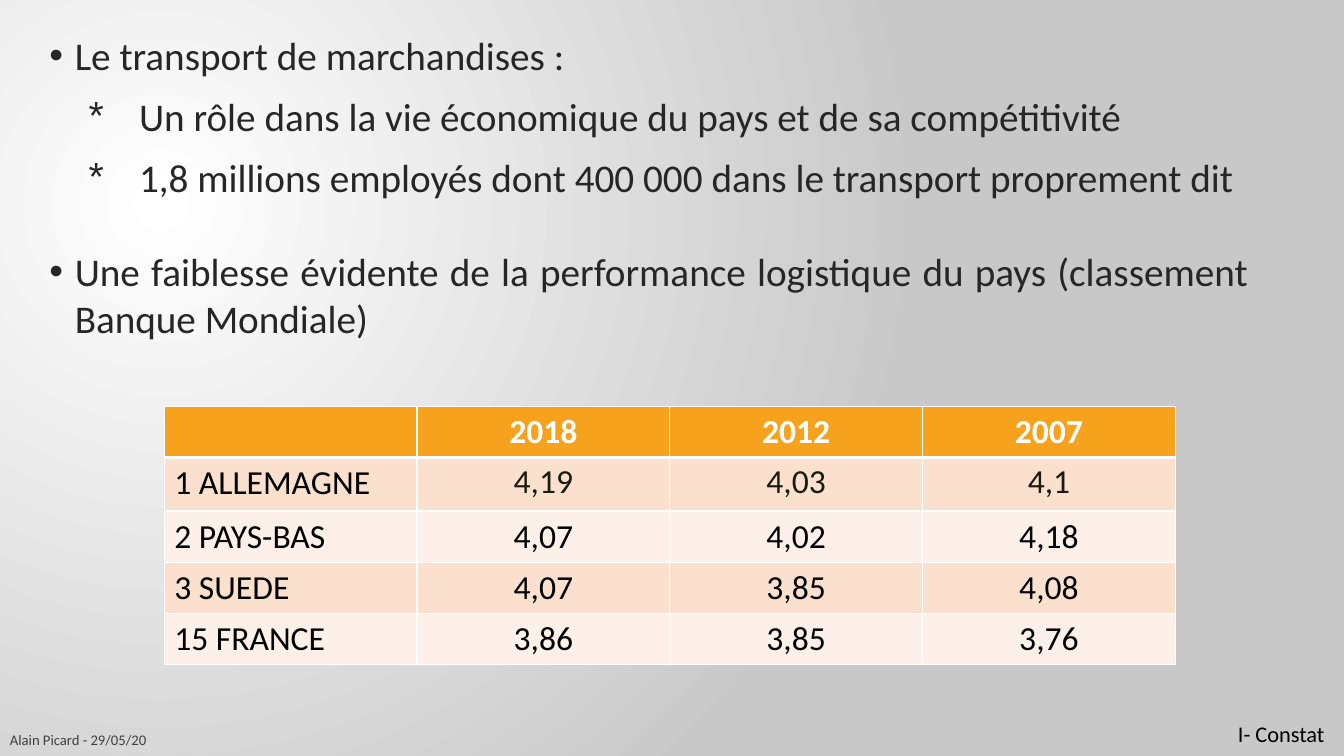
"""Build the slide on freight transport and logistics performance."""
from lxml.etree import SubElement
from pptx import Presentation
from pptx.dml.color import RGBColor
from pptx.enum.text import MSO_ANCHOR, MSO_AUTO_SIZE, PP_ALIGN
from pptx.oxml.ns import qn
from pptx.util import Cm, Pt


def style(para, size, color, bold=False):
    for run in para.runs:
        font = run.font
        font.name, font.size, font.bold = "Calibri", Pt(size), bold
        font.color.rgb = RGBColor.from_string(color)


def edge(cell, side, width):
    line = SubElement(cell._tc.get_or_add_tcPr(), qn("a:ln" + side), w=str(Pt(width)))
    SubElement(SubElement(line, qn("a:solidFill")), qn("a:srgbClr"), val="FFFFFF")


deck = Presentation()
deck.slide_width, deck.slide_height = Cm(33.87), Cm(19.05)
slide = deck.slides.add_slide(deck.slide_layouts[1])
title = slide.shapes.title.element
title.getparent().remove(title)

back = slide.background.fill
back.gradient()
for stop, color, pos in zip(back.gradient_stops, ("FFFFFF", "C8C8C8"), (0, 1)):
    stop.color.rgb = RGBColor.from_string(color)
    stop.position = pos
grad = slide.element.find(".//" + qn("a:gradFill"))
grad.remove(grad.find(qn("a:lin")))
glow = SubElement(grad, qn("a:path"), path="circle")
SubElement(glow, qn("a:fillToRect"), l="50000", t="55000", r="125000", b="100000")

points = [
    (0, 10, "Le transport de marchandises :"),
    (1, 10, "Un rôle dans la vie économique du pays et de sa compétitivité"),
    (1, 10, "1,8 millions employés dont 400 000 dans le transport proprement dit"),
    (0, 33.4, "Une faiblesse évidente de la performance logistique du pays "
              "(classement Banque Mondiale)"),
]
marks = [("•", 0.64, -0.64), ("*", 2.26, -1.27)]
body = slide.placeholders[1]
body.left, body.top, body.width, body.height = Cm(0.99), Cm(0.66), Cm(30.71), Cm(11.25)
frame = body.text_frame
frame.auto_size = MSO_AUTO_SIZE.NONE
frame.vertical_anchor = MSO_ANCHOR.TOP
frame.text = "\n".join(text for level, gap, text in points)
for para, (level, gap, text) in zip(frame.paragraphs, points):
    mark, left, hang = marks[level]
    para.level = level
    para.alignment = PP_ALIGN.JUSTIFY
    para.space_before = Pt(gap)
    style(para, 28, "262626")
    props = para._p.get_or_add_pPr()
    props.set("marL", str(Cm(left)))
    props.set("indent", str(Cm(hang)))
    SubElement(props, qn("a:buFont"), typeface="Arial")
    SubElement(props, qn("a:buChar"), char=mark)

rows = [
    ("", "2018", "2012", "2007"),
    ("1 ALLEMAGNE", "4,19", "4,03", "4,1"),
    ("2 PAYS-BAS", "4,07", "4,02", "4,18"),
    ("3 SUEDE", "4,07", "3,85", "4,08"),
    ("15 FRANCE", "3,86", "3,85", "3,76"),
]
table = slide.shapes.add_table(5, 4, Cm(4.14), Cm(10.24), Cm(25.48), Cm(6.22)).table
for r, row in enumerate(rows):
    table.rows[r].height = Cm(1.35 if r == 1 else 1.22)
    for c, text in enumerate(row):
        cell = table.cell(r, c)
        cell.text = text
        para = cell.text_frame.paragraphs[0]
        first = r == 1 and c > 0
        if c:
            para.alignment = PP_ALIGN.CENTER
        if first:
            para.line_spacing = 0.94
            para.space_before, para.space_after = Pt(10), Pt(2)
        ink = "FFFFFF" if r == 0 else "191B0E" if first else "000000"
        style(para, 24, ink, r == 0)
        for side in "LRTB":
            thick = (r, side) in ((0, "B"), (1, "T"))
            edge(cell, side, 3 if thick else 1)
        cell.fill.solid()
        shade = "F6A21D" if r == 0 else ("FDF0E8", "FBE0CD")[r % 2]
        cell.fill.fore_color.rgb = RGBColor.from_string(shade)

notes = [
    ("Alain Picard - 29/05/20", 0, 18.19, 16.38, 0.89, 10.5, PP_ALIGN.LEFT),
    ("I- Constat", 25.53, 18.03, 8.1, 0.94, 16, PP_ALIGN.RIGHT),
]
for text, left, top, width, height, size, align in notes:
    box = slide.shapes.add_textbox(Cm(left), Cm(top), Cm(width), Cm(height))
    frame = box.text_frame
    frame.word_wrap = True
    frame.text = text
    para = frame.paragraphs[0]
    para.alignment = align
    style(para, size, "000000")
    if align == PP_ALIGN.LEFT:
        frame.vertical_anchor = MSO_ANCHOR.MIDDLE
        tint = box.element.find(".//" + qn("a:srgbClr"))
        SubElement(tint, qn("a:alpha"), val="70000")

deck.save("out.pptx")
